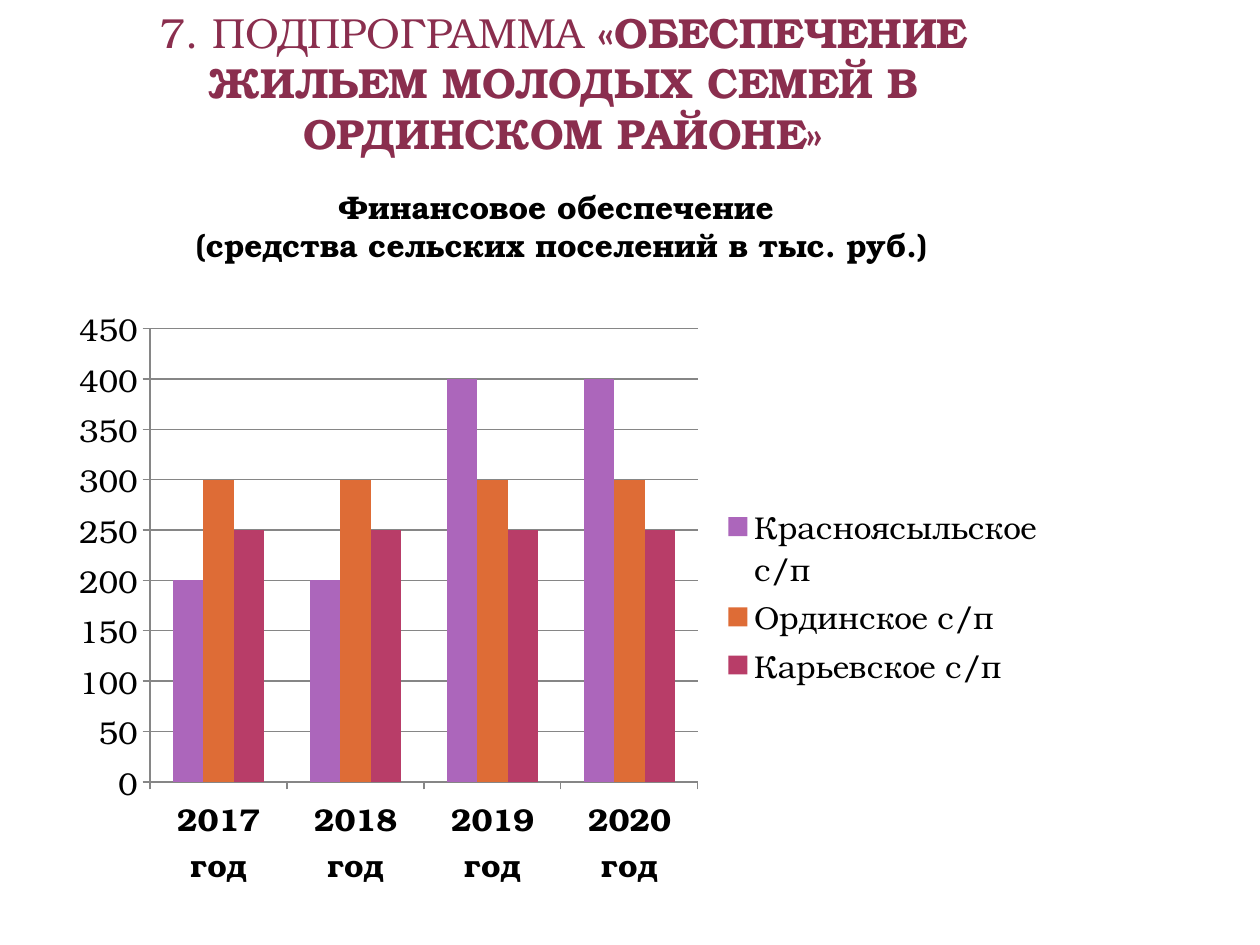
from lxml.etree import SubElement
from pptx import Presentation
from pptx.chart.data import CategoryChartData
from pptx.dml.color import RGBColor
from pptx.enum.chart import XL_CHART_TYPE, XL_LEGEND_POSITION, XL_TICK_MARK
from pptx.enum.text import MSO_ANCHOR, MSO_AUTO_SIZE, PP_ALIGN
from pptx.oxml import parse_xml
from pptx.oxml.ns import nsdecls, qn
from pptx.util import Inches, Pt

FONT = "TeX Gyre Bonum"
COLORS = {
    "title": "8A2E4E",
    "text": "000000",
    "grid": "868686",
    "background": "FFFFFF",
}
YEARS = ["2017 год", "2018 год", "2019 год", "2020 год"]
# Name, values, fill and rank in the series order
SETTLEMENTS = [
    ("Красноясыльское с/п", (200, 200, 400, 400), "AC66BB", 1),
    ("Ординское с/п", (300, 300, 300, 300), "DE6C36", 2),
    ("Карьевское с/п", (250, 250, 250, 250), "B83D68", 0),
]


def color(name):
    return RGBColor.from_string(COLORS[name])


def format_font(font, size, color_name, bold=False):
    values = {"name": FONT, "size": Pt(size), "bold": bold}
    for attribute, value in values.items():
        setattr(font, attribute, value)
    font.color.rgb = color(color_name)


def place(shape, box):
    for attribute, value in zip(("left", "top", "width", "height"), box):
        setattr(shape, attribute, Inches(value))


def format_frame(frame, anchor, right_margin):
    values = {
        "word_wrap": True,
        "auto_size": MSO_AUTO_SIZE.NONE,
        "vertical_anchor": anchor,
        "margin_left": Inches(0.05),
        "margin_right": Inches(right_margin),
        "margin_top": 0,
        "margin_bottom": 0,
    }
    for attribute, value in values.items():
        setattr(frame, attribute, value)


def add_title(slide, box):
    title = slide.shapes.title
    place(title, box)
    format_frame(title.text_frame, MSO_ANCHOR.BOTTOM, 0.05)
    paragraph = title.text_frame.paragraphs[0]
    paragraph.alignment = PP_ALIGN.CENTER
    parts = [
        ("7. ПОДПРОГРАММА ", False),
        ("«ОБЕСПЕЧЕНИЕ ЖИЛЬЕМ МОЛОДЫХ СЕМЕЙ В ОРДИНСКОМ РАЙОНЕ»", True),
    ]
    for text, bold in parts:
        run = paragraph.add_run()
        run.text = text
        format_font(run.font, 24, "title", bold)


def add_subtitle(slide, box):
    body = slide.placeholders[1]
    place(body, box)
    frame = body.text_frame
    format_frame(frame, MSO_ANCHOR.TOP, 0)
    frame.text = "Финансовое обеспечение\n (средства сельских поселений в тыс. руб.)"
    for paragraph in frame.paragraphs:
        paragraph.alignment = PP_ALIGN.CENTER
        paragraph.space_before = Pt(0)
        properties = paragraph._p.get_or_add_pPr()
        properties.set("marL", "0")
        properties.set("indent", "0")
        SubElement(properties, qn("a:buNone"))
        format_font(paragraph.runs[0].font, 18, "text", True)


def set_layout(element, box, inner=False):
    """Fix a chart part at fractions of the chart area."""
    for old_layout in element.findall(qn("c:layout")):
        element.remove(old_layout)
    target = '<c:layoutTarget val="inner"/>' if inner else ""
    modes = "".join(f'<c:{axis}Mode val="edge"/>' for axis in "xy")
    sizes = "".join(f'<c:{name} val="{value}"/>' for name, value in zip("xywh", box))
    layout = parse_xml(
        f'<c:layout {nsdecls("c")}><c:manualLayout>{target}{modes}{sizes}'
        "</c:manualLayout></c:layout>"
    )
    position = element.find(qn("c:legendPos"))
    if position is None:
        element.insert(0, layout)
    else:
        position.addnext(layout)


def add_funding_chart(slide, box):
    data = CategoryChartData()
    data.categories = YEARS
    for name, values, _, _ in SETTLEMENTS:
        data.add_series(name, values)
    chart = slide.shapes.add_chart(
        XL_CHART_TYPE.COLUMN_CLUSTERED, *map(Inches, box), data
    ).chart
    chart.has_title = False
    format_font(chart.font, 18, "text")

    # Columns
    plot = chart.plots[0]
    plot.vary_by_categories = False
    plot.gap_width = 150
    plot.overlap = 0
    for series, (_, _, fill, rank) in zip(list(plot.series), SETTLEMENTS):
        series.format.fill.solid()
        series.format.fill.fore_color.rgb = RGBColor.from_string(fill)
        series._element.find(qn("c:order")).set("val", str(rank))

    # Axes
    value_axis = chart.value_axis
    value_axis.minimum_scale = 0
    value_axis.maximum_scale = 450
    value_axis.major_unit = 50
    value_axis.has_major_gridlines = True
    for axis in (chart.category_axis, value_axis):
        axis.major_tick_mark = XL_TICK_MARK.OUTSIDE
        axis.format.line.color.rgb = color("grid")
        axis.format.line.width = Pt(0.75)
    gridlines = value_axis.major_gridlines.format.line
    gridlines.color.rgb = color("grid")
    gridlines.width = Pt(0.75)
    format_font(chart.category_axis.tick_labels.font, 18, "text", True)

    # Legend
    chart.has_legend = True
    chart.legend.position = XL_LEGEND_POSITION.RIGHT
    chart.legend.include_in_layout = False

    plot_area = chart._chartSpace.chart.plotArea
    set_layout(plot_area, (0.091, 0.056, 0.549, 0.753), inner=True)
    set_layout(chart.legend._element, (0.66, 0.34, 0.33, 0.32))


def main():
    presentation = Presentation()
    presentation.slide_width = Inches(10)
    presentation.slide_height = Inches(7.5)
    slide = presentation.slides.add_slide(presentation.slide_layouts[1])
    slide.background.fill.solid()
    slide.background.fill.fore_color.rgb = color("background")
    add_title(slide, (0.5, 0.25, 7.94, 1))
    add_subtitle(slide, (0.5, 1.49, 7.78, 0.81))
    add_funding_chart(slide, (0.47, 2.34, 7.92, 4.78))
    presentation.save("out.pptx")


if __name__ == "__main__":
    main()
